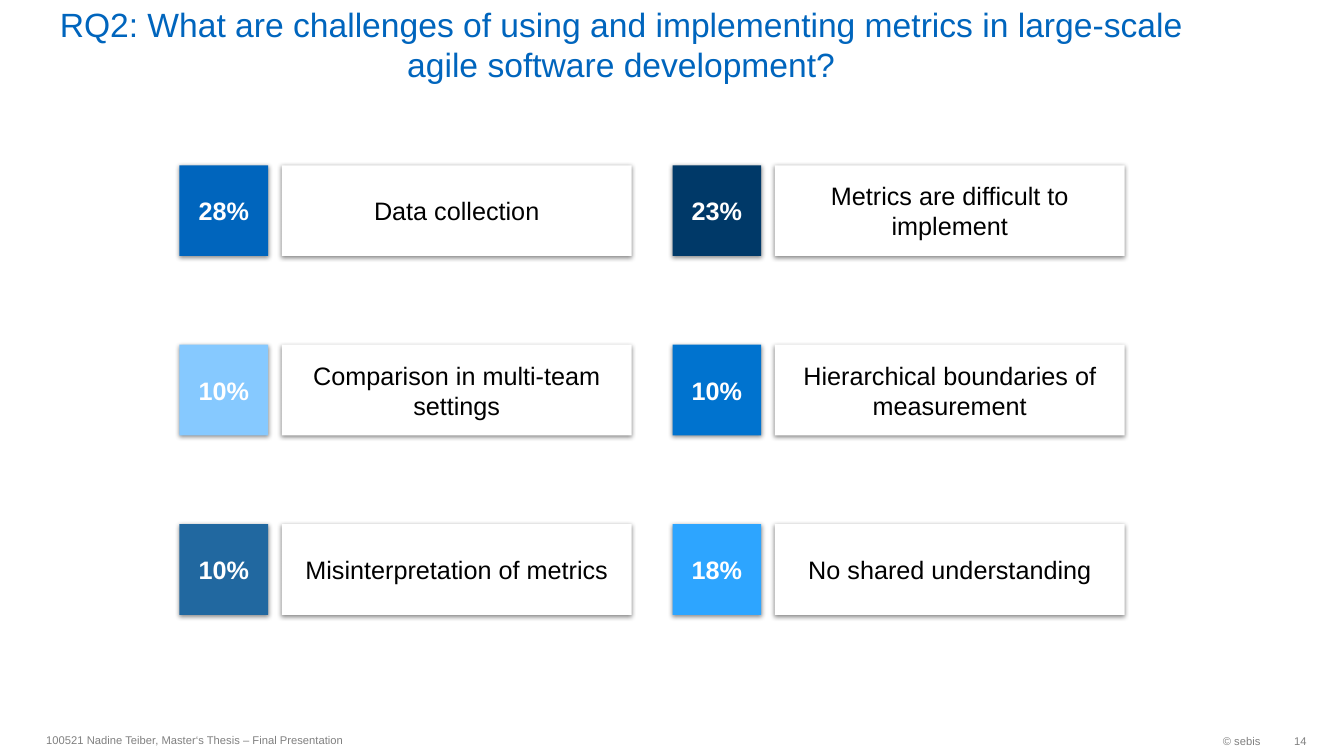
from dataclasses import dataclass

from lxml.etree import SubElement
from pptx import Presentation
from pptx.dml.color import RGBColor
from pptx.enum.shapes import MSO_SHAPE
from pptx.enum.text import MSO_ANCHOR, PP_ALIGN
from pptx.oxml.ns import qn
from pptx.shapes.autoshape import Shape
from pptx.slide import Slide
from pptx.util import Inches, Pt


@dataclass(frozen=True)
class Challenge:
    share: str
    label: str
    fill: str


@dataclass(frozen=True)
class Caption:
    text: str
    left: float
    top: float
    width: float
    height: float
    size: int
    color: str
    align: PP_ALIGN
    anchor: MSO_ANCHOR = MSO_ANCHOR.MIDDLE
    right_inset: float = 0.1
    vertical_inset: float = 0.05


# Cards in reading order, two per row
CHALLENGES = [
    Challenge("28%", "Data collection", "0065BD"),
    Challenge("23%", "Metrics are difficult to implement", "003968"),
    Challenge("10%", "Comparison in multi-team settings", "86C9FF"),
    Challenge("10%", "Hierarchical boundaries of measurement", "0073CF"),
    Challenge("10%", "Misinterpretation of metrics", "2168A0"),
    Challenge("18%", "No shared understanding", "2DA5FF"),
]

# Title and footer
CAPTIONS = [
    Caption("RQ2: What are challenges of using and implementing metrics in "
            "large-scale agile software development?",
            0.37, 0.05, 11.58, 0.79, 24, "0065BD", PP_ALIGN.CENTER,
            anchor=MSO_ANCHOR.BOTTOM, vertical_inset=0),
    Caption("100521 Nadine Teiber, Master‘s Thesis – Final Presentation",
            0.36, 7.18, 6.3, 0.32, 8, "808080", PP_ALIGN.LEFT),
    Caption("© sebis", 10.26, 7.19, 2.34, 0.32, 8, "808080", PP_ALIGN.RIGHT),
    Caption("14", 12.6, 7.19, 0.36, 0.32, 8, "808080", PP_ALIGN.RIGHT,
            right_inset=0),
]

# Card grid
COLUMNS = 2
GRID_LEFT, GRID_TOP = 1.78, 1.64
COLUMN_STEP, ROW_STEP = 4.89, 1.78
SHARE_WIDTH, LABEL_OFFSET, LABEL_WIDTH = 0.88, 1.015, 3.47
CARD_HEIGHT = 0.9


def rgb(color: str) -> RGBColor:
    return RGBColor.from_string(color)


def write(box: Shape, text: str, size: int, color: str, align: PP_ALIGN,
          anchor: MSO_ANCHOR = MSO_ANCHOR.MIDDLE, bold: bool = False) -> None:
    frame = box.text_frame
    frame.word_wrap = True
    frame.vertical_anchor = anchor
    para = frame.paragraphs[0]
    para.text = text
    para.alignment = align
    para.font.name = "Arial"
    para.font.size = Pt(size)
    para.font.bold = bold
    para.font.color.rgb = rgb(color)


def add_soft_shadow(box: Shape) -> None:
    box.shadow.inherit = False
    effects = box._element.spPr.find(qn("a:effectLst"))
    shadow = SubElement(effects, qn("a:outerShdw"), blurRad=str(Pt(3.5)),
                        dist=str(Pt(1.1)), dir="5400000", rotWithShape="0")
    shade = SubElement(shadow, qn("a:srgbClr"), val="000000")
    SubElement(shade, qn("a:alpha"), val="45000")


def add_tile(page: Slide, left: float, top: float, width: float, fill: str,
             text: str, color: str, bold: bool = False) -> None:
    tile = page.shapes.add_shape(MSO_SHAPE.RECTANGLE, Inches(left), Inches(top),
                                 Inches(width), Inches(CARD_HEIGHT))
    tile.fill.solid()
    tile.fill.fore_color.rgb = rgb(fill)
    tile.line.fill.background()
    add_soft_shadow(tile)
    write(tile, text, 18, color, PP_ALIGN.CENTER, bold=bold)


def add_caption(page: Slide, caption: Caption) -> None:
    box = page.shapes.add_textbox(Inches(caption.left), Inches(caption.top),
                                  Inches(caption.width), Inches(caption.height))
    frame = box.text_frame
    frame.margin_right = Inches(caption.right_inset)
    frame.margin_top = frame.margin_bottom = Inches(caption.vertical_inset)
    write(box, caption.text, caption.size, caption.color, caption.align,
          caption.anchor)


def add_challenge(page: Slide, index: int, challenge: Challenge) -> None:
    row, column = divmod(index, COLUMNS)
    left = GRID_LEFT + column * COLUMN_STEP
    top = GRID_TOP + row * ROW_STEP
    add_tile(page, left + LABEL_OFFSET, top, LABEL_WIDTH, "FFFFFF",
             challenge.label, "000000")
    add_tile(page, left, top, SHARE_WIDTH, challenge.fill,
             challenge.share, "FFFFFF", bold=True)


def main() -> None:
    deck = Presentation()
    deck.slide_width, deck.slide_height = Inches(13.33), Inches(7.5)
    page = deck.slides.add_slide(deck.slide_layouts[6])
    for caption in CAPTIONS:
        add_caption(page, caption)
    for index, challenge in enumerate(CHALLENGES):
        add_challenge(page, index, challenge)
    deck.save("out.pptx")


if __name__ == "__main__":
    main()
